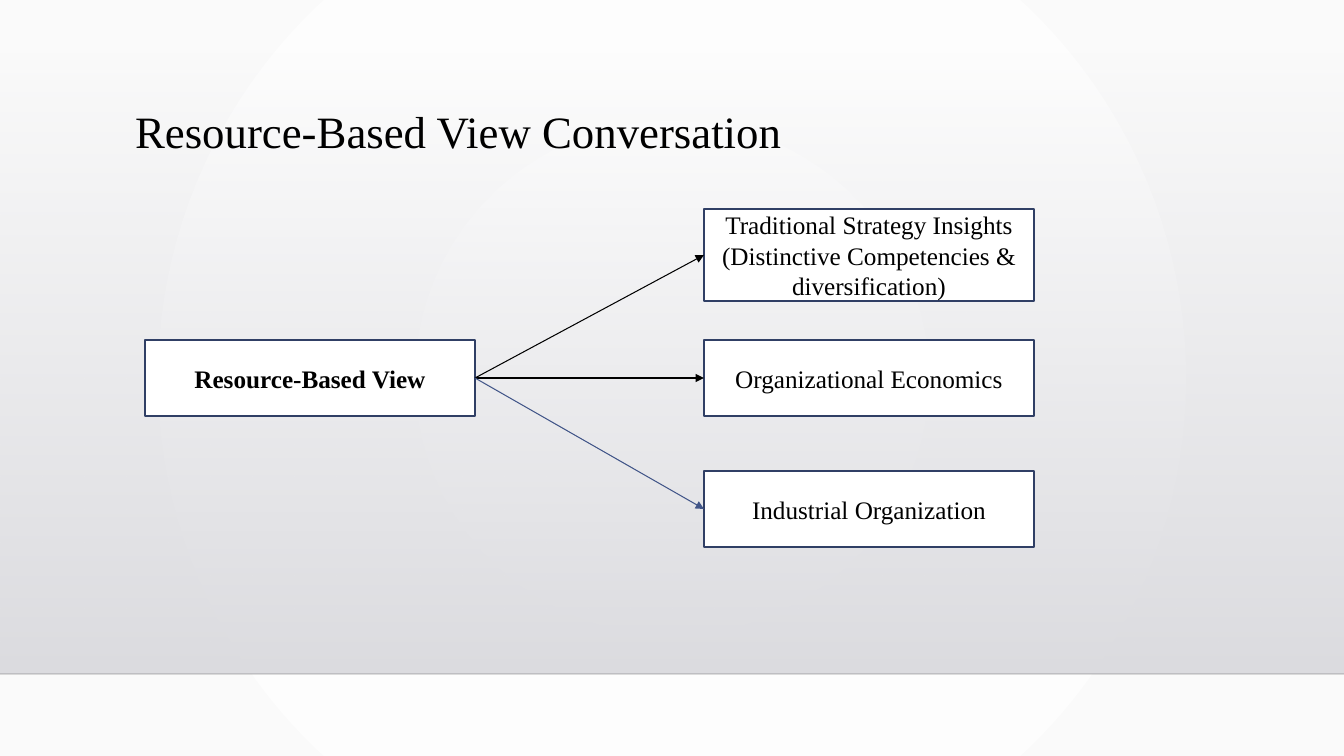
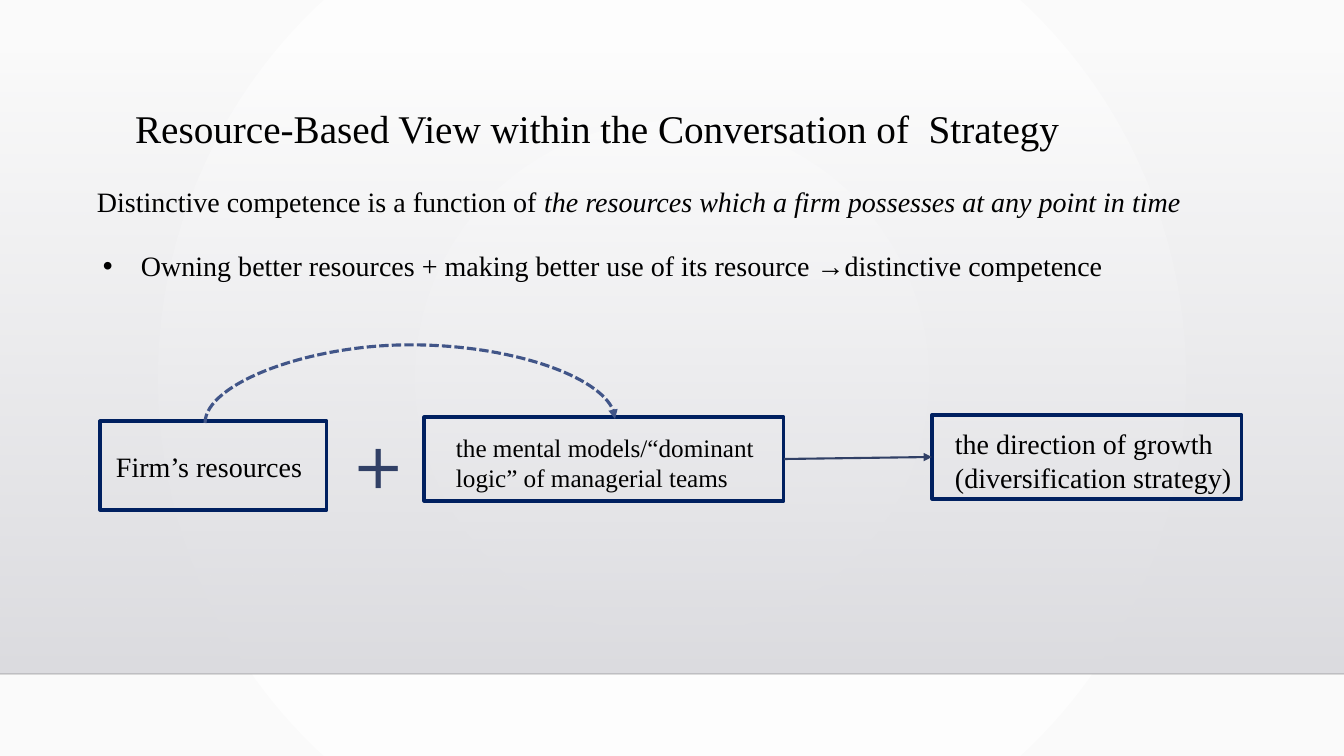
from pptx import Presentation
from pptx.dml.color import RGBColor
from pptx.enum.dml import MSO_LINE
from pptx.enum.shapes import MSO_CONNECTOR as LINK, MSO_SHAPE as SHAPE
from pptx.enum.text import MSO_ANCHOR as ANCHOR, MSO_AUTO_SIZE as AUTO_SIZE, PP_ALIGN as ALIGN
from pptx.oxml import parse_xml
from pptx.oxml.ns import nsdecls, qn
from pptx.util import Pt
from lxml.etree import SubElement

PX = 914400 / 100.8
BODY_FONT = "Times New Roman"
BLACK = RGBColor(0x00, 0x00, 0x00)
WHITE = RGBColor(0xFF, 0xFF, 0xFF)
HORIZON = RGBColor(0x00, 0x00, 0x01)
SLATE = RGBColor(0x30, 0x3F, 0x65)
STEEL = RGBColor(0x31, 0x40, 0x66)
BLUE = RGBColor(0x41, 0x55, 0x88)
NAVY = RGBColor(0x00, 0x20, 0x60)


def write(frame, runs, size, align=ALIGN.LEFT, anchor=ANCHOR.TOP, color=BLACK, font=BODY_FONT):
    frame.word_wrap = True
    frame.auto_size = AUTO_SIZE.NONE
    frame.vertical_anchor = anchor
    paragraph = frame.paragraphs[0]
    paragraph.alignment = align
    for text, style in runs:
        run = paragraph.add_run()
        run.text = text
        run.font.name = font
        run.font.size = Pt(size)
        run.font.color.rgb = color
        run.font.bold = style == "bold"
        run.font.italic = style == "italic"
    return paragraph


def add_box(slide, bounds, border, weight, fill=None):
    box = slide.shapes.add_shape(SHAPE.RECTANGLE, *[round(v * PX) for v in bounds])
    box.shadow.inherit = False
    if fill is None:
        box.fill.background()
    else:
        box.fill.solid()
        box.fill.fore_color.rgb = fill
    box.line.color.rgb = border
    box.line.width = Pt(weight)
    return box


prs = Presentation()
prs.slide_width = round(1344 * PX)
prs.slide_height = round(756 * PX)
layout = prs.slide_layouts[5]
for footer in list(layout.placeholders)[1:]:
    footer.element.getparent().remove(footer.element)

layout.element.cSld.insert(0, parse_xml(
    f'<p:bg {nsdecls("p", "a")}><p:bgPr><a:gradFill rotWithShape="1"><a:gsLst>'
    '<a:gs pos="0"><a:srgbClr val="FFFFFF"/></a:gs>'
    '<a:gs pos="100000"><a:srgbClr val="FAFAFA"/></a:gs></a:gsLst>'
    '<a:path path="circle"><a:fillToRect l="50000" t="50000" r="50000" b="50000"/></a:path>'
    '</a:gradFill><a:effectLst/></p:bgPr></p:bg>'))

view_slide, strategy_slide = [prs.slides.add_slide(layout) for _ in range(2)]

band = view_slide.shapes.add_shape(SHAPE.RECTANGLE, 0, round(51 * PX), prs.slide_width, round(623 * PX))
band.shadow.inherit = False
band.line.fill.background()
band.element.spPr.insert(2, parse_xml(
    f'<a:gradFill {nsdecls("a")} rotWithShape="1"><a:gsLst>'
    '<a:gs pos="0"><a:srgbClr val="DCDCE0"><a:alpha val="0"/></a:srgbClr></a:gs>'
    '<a:gs pos="100000"><a:srgbClr val="DEDEE2"/></a:gs></a:gsLst>'
    '<a:lin ang="5400000" scaled="0"/></a:gradFill>'))
horizon = view_slide.shapes.add_connector(
    LINK.STRAIGHT, 0, round(674 * PX), prs.slide_width, round(674 * PX))
horizon.line.color.rgb = HORIZON
horizon.line.width = Pt(1)
SubElement(next(horizon.element.iter(qn("a:srgbClr"))), qn("a:alpha"), val="20000")
SubElement(horizon.element.spPr, qn("a:effectLst"))
for position, part in enumerate([band, horizon], start=2):
    layout.shapes.element.insert(position, part.element)

for slide, heading, size, width, height in [
    (view_slide, "Resource-Based View Conversation", 32, 1058, 116),
    (strategy_slide, "Resource-Based View within the Conversation of  Strategy", 28, 1332, 61),
]:
    title = slide.shapes.title
    title.left, title.top = round(125 * PX), round(105 * PX)
    title.width, title.height = round(width * PX), round(height * PX)
    write(title.text_frame, [(heading, None)], size).line_spacing = 0.9

arrows = []

view_box = add_box(view_slide, (145, 340, 330, 76), SLATE, 1.25, WHITE)
write(view_box.text_frame, [("Resource-Based View", "bold")], 18, ALIGN.CENTER, ANCHOR.MIDDLE)
for label, top, height, arrow_color in [
    ("Traditional Strategy Insights (Distinctive Competencies & diversification)", 209, 92, BLACK),
    ("Organizational Economics", 340, 76, BLACK),
    ("Industrial Organization", 471, 76, BLUE),
]:
    origin = add_box(view_slide, (704, top, 330, height), SLATE, 1.25, WHITE)
    write(origin.text_frame, [(label, None)], 18, ALIGN.CENTER, ANCHOR.MIDDLE)
    link = view_slide.shapes.add_connector(LINK.STRAIGHT, 0, 0, 0, 0)
    link.begin_connect(view_box, 3)
    link.end_connect(origin, 1)
    arrows.append((link, arrow_color, 0.75))

statement, consequence, plus = [
    strategy_slide.shapes.add_textbox(*[round(v * PX) for v in bounds]).text_frame
    for bounds in [(87, 180, 1156, 44), (93, 244, 1187, 44), (344, 412, 67, 95)]
]
write(statement, [
    ("Distinctive competence is a function of ", None),
    ("the resources which a firm possesses at any point in time", "italic"),
], 20)
bullet = write(consequence, [
    ("Owning better resources + making better use of its resource →distinctive competence", None),
], 20)
bullet_props = bullet._p.get_or_add_pPr()
bullet_props.set("marL", str(round(38 * PX)))
bullet_props.set("indent", str(round(-38 * PX)))
SubElement(bullet_props, qn("a:buFont"), typeface="Arial")
SubElement(bullet_props, qn("a:buChar"), char="•")
write(plus, [("+", None)], 50, color=STEEL, font="TeX Gyre Adventor")

factors = []
for label, size, bounds, indent, drop in [
    ("Firm’s resources", 20, (100, 421, 227, 89), 16, 2),
    ("the mental models/“dominant logic” of managerial teams", 18, (424, 417, 360, 84), 32, 7),
    ("the direction of growth (diversification strategy)", 20, (932, 415, 310, 84), 23, 6),
]:
    factor = add_box(strategy_slide, bounds, NAVY, 2.25)
    frame = factor.text_frame
    frame.margin_left, frame.margin_top = round(indent * PX), round(drop * PX)
    frame.margin_right = frame.margin_bottom = 0
    write(frame, [(label, None)], size, anchor=ANCHOR.MIDDLE)
    factors.append(factor)
resources, mental_models, growth = factors

influence = strategy_slide.shapes.add_connector(
    LINK.CURVE, *[round(v * PX) for v in (408, 216, 412, 626)])
turn = influence.element.spPr.find(qn("a:xfrm"))
for key, value in [("rot", "5400000"), ("flipH", "1"), ("flipV", "1")]:
    turn.set(key, value)
bends = next(influence.element.iter(qn("a:avLst")))
SubElement(bends, qn("a:gd"), name="adj1", fmla="val 1950000")
influence.line.dash_style = MSO_LINE.SQUARE_DOT
arrows.append((influence, BLUE, 2.25))

outcome = strategy_slide.shapes.add_connector(LINK.STRAIGHT, 0, 0, 0, 0)
outcome.begin_connect(mental_models, 3)
outcome.end_connect(growth, 1)
arrows.append((outcome, STEEL, 1.5))

for arrow, color, weight in arrows:
    arrow.line.color.rgb = color
    arrow.line.width = Pt(weight)
    SubElement(arrow.element.spPr.find(qn("a:ln")), qn("a:tailEnd"), type="triangle")
    SubElement(arrow.element.spPr, qn("a:effectLst"))

prs.save("out.pptx")
